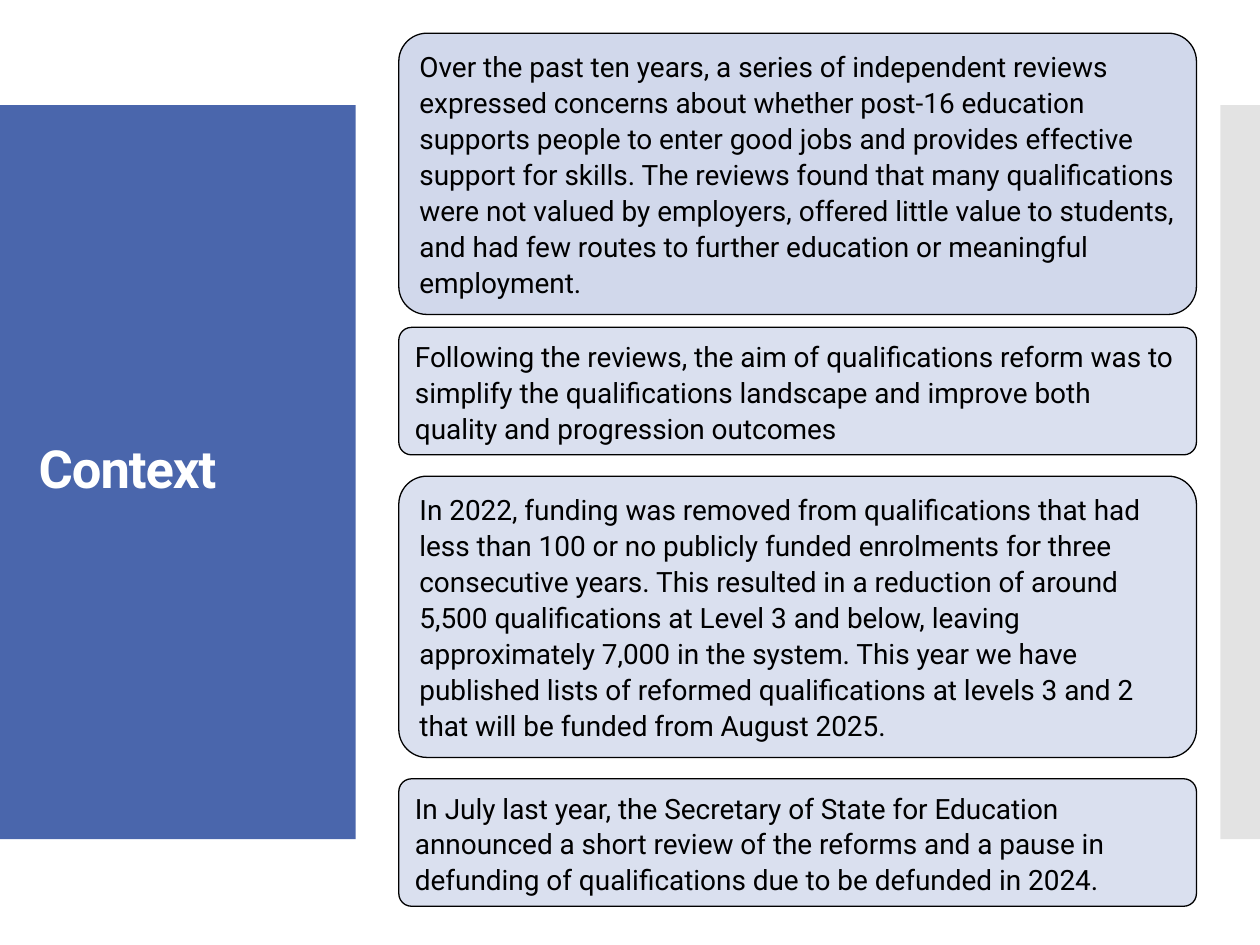
from lxml import etree
from pptx import Presentation
from pptx.dml.color import RGBColor
from pptx.enum import shapes, text
from pptx.oxml.ns import qn
from pptx.util import Cm, Pt

FONT = "Roboto"
BLUE, GREY, WHITE, BLACK = "4A66AC", "C8C8C8", "FFFFFF", "000000"
TALL, SHORT = 5.67, 2.57

# fill, height, gap above, text
CARDS = [
    ("D1D8EB", TALL, 0,
     "Over the past ten years, a series of independent reviews expressed concerns "
     "about whether post-16 education supports people to enter good jobs and "
     "provides effective support for skills. The reviews found that many "
     "qualifications were not valued by employers, offered little value to students, "
     "and had few routes to further education or meaningful employment."),
    ("DAE0EF", SHORT, 0.26,
     "Following the reviews, the aim of qualifications reform was to simplify the "
     "qualifications landscape and improve both quality and progression outcomes"),
    ("DAE0EF", TALL, 0.43,
     "In 2022, funding was removed from qualifications that had less than 100 or no "
     "publicly funded enrolments for three consecutive years. This resulted in a "
     "reduction of around 5,500 qualifications at Level 3 and below, leaving "
     "approximately 7,000 in the system. This year we have published lists of "
     "reformed qualifications at levels 3 and 2 that will be funded from August 2025."),
    ("DAE0EF", SHORT, 0.43,
     "In July last year, the Secretary of State for Education announced a short "
     "review of the reforms and a pause in defunding of qualifications due to be "
     "defunded in 2024."),
]


def rgb(value):
    return RGBColor.from_string(value)


def add_box(s, x, y, w, h, fill, kind=shapes.MSO_SHAPE.RECTANGLE, line=None):
    sp = s.shapes.add_shape(kind, Cm(x), Cm(y), Cm(w), Cm(h))
    sp.shadow.inherit = False
    sp.fill.solid()
    sp.fill.fore_color.rgb = rgb(fill)
    if line:
        sp.line.color.rgb = rgb(line)
        sp.line.width = Pt(0.75)
    else:
        sp.line.fill.background()
    return sp


def write(sp, content, size, color=BLACK, bold=False, spacing=1.0,
          anchor=text.MSO_ANCHOR.TOP):
    tf = sp.text_frame
    tf.word_wrap = True
    tf.vertical_anchor = anchor
    p = tf.paragraphs[0]
    p.alignment = text.PP_ALIGN.LEFT
    p.line_spacing = spacing
    r = p.add_run()
    r.text = content
    r.font.name, r.font.size, r.font.bold = FONT, Pt(size), bold
    r.font.color.rgb = rgb(color)
    return r


def set_alpha(sp, percent):
    color = sp.fill._xPr.find(qn("a:solidFill"))[0]
    etree.SubElement(color, qn("a:alpha")).set("val", str(percent * 1000))


def add_title_panel(s, x, y, w, h):
    add_box(s, x, y, w, h, BLUE)
    title = s.shapes.add_textbox(Cm(x + 0.53), Cm(y + 1), Cm(w - 1.02), Cm(h - 2.03))
    r = write(title, "Context", 30, WHITE, True, 0.9, text.MSO_ANCHOR.MIDDLE)
    r.font._element.set("spc", "-60")


def add_side_strip(s, x, y, w, h):
    set_alpha(add_box(s, x, y, w, h, GREY), 50)


def add_cards(s, x, y, w):
    """Stack the cards downwards from y."""
    for fill, height, gap, content in CARDS:
        y += gap
        card = add_box(s, x, y, w, height, fill,
                       shapes.MSO_SHAPE.ROUNDED_RECTANGLE, BLACK)
        card.adjustments[0] = 0.1
        write(card, content, 16, spacing=1.07)
        y += height


def main():
    prs = Presentation()
    prs.slide_width, prs.slide_height = Cm(25.4), Cm(19.05)
    s = prs.slides.add_slide(prs.slide_layouts[6])
    add_title_panel(s, 0, 2.12, 7.17, 14.8)
    add_side_strip(s, 24.6, 2.12, 0.8, 14.8)
    add_cards(s, 8.04, 0.67, 16.08)
    prs.save("out.pptx")


if __name__ == "__main__":
    main()
